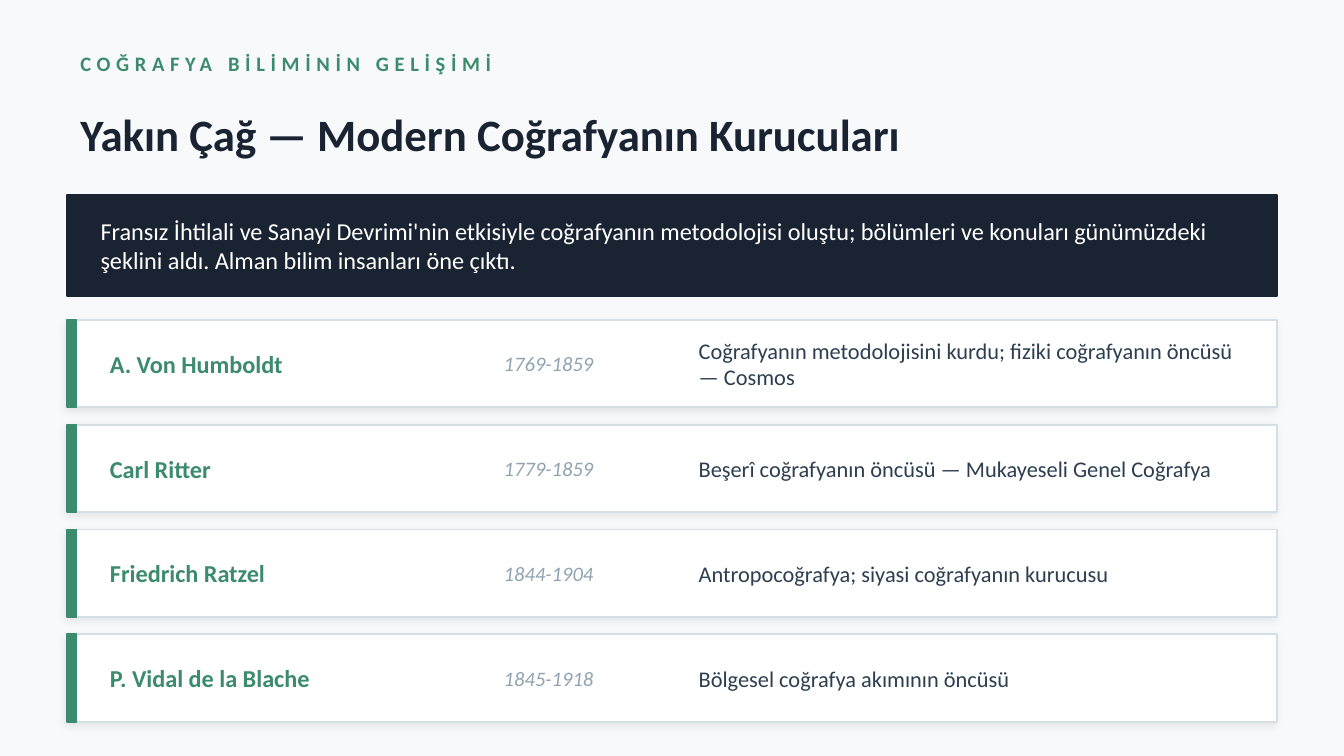
from lxml.etree import SubElement
from pptx import Presentation
from pptx.dml.color import RGBColor
from pptx.enum.shapes import MSO_SHAPE
from pptx.enum.text import MSO_ANCHOR
from pptx.oxml.ns import qn
from pptx.util import Emu, Pt

PX_PER_INCH = 200
EMU_PER_PX = 914400 // PX_PER_INCH

BACKGROUND = RGBColor(0xF7, 0xF9, 0xFB)
NAVY = RGBColor(0x1A, 0x23, 0x32)
GREEN = RGBColor(0x3D, 0x8B, 0x6E)
WHITE = RGBColor(0xFF, 0xFF, 0xFF)
BORDER = RGBColor(0xD4, 0xDE, 0xE5)
MUTED = RGBColor(0x8F, 0xA3, 0xB1)
SLATE = RGBColor(0x2C, 0x3E, 0x50)

LEFT, WIDTH = 100, 1800
BANNER_TOP, BANNER_HEIGHT = 290, 150
CARDS_TOP, CARD_HEIGHT, CARD_PITCH = 476, 130, 156

FOUNDERS = [
    ("A. Von Humboldt", "1769-1859",
     "Coğrafyanın metodolojisini kurdu; fiziki coğrafyanın öncüsü — Cosmos"),
    ("Carl Ritter", "1779-1859",
     "Beşerî coğrafyanın öncüsü — Mukayeseli Genel Coğrafya"),
    ("Friedrich Ratzel", "1844-1904",
     "Antropocoğrafya; siyasi coğrafyanın kurucusu"),
    ("P. Vidal de la Blache", "1845-1918",
     "Bölgesel coğrafya akımının öncüsü"),
]


def px(*lengths):
    return [Emu(length * EMU_PER_PX) for length in lengths]


def add_label(slide, text, box, size, color, bold=False, italic=False, spacing=0):
    frame = slide.shapes.add_textbox(*px(*box)).text_frame
    frame.word_wrap = True
    frame.vertical_anchor = MSO_ANCHOR.MIDDLE
    paragraph = frame.paragraphs[0]
    font = paragraph.font
    font.name = "Calibri"
    font.size = Pt(size)
    font.bold = bold
    font.italic = italic
    font.color.rgb = color
    run = paragraph.add_run()
    run.text = text
    if spacing:
        run._r.get_or_add_rPr().set("spc", str(spacing * 100))


def add_panel(slide, box, fill, border):
    panel = slide.shapes.add_shape(MSO_SHAPE.RECTANGLE, *px(*box))
    panel.shadow.inherit = False
    panel.fill.solid()
    panel.fill.fore_color.rgb = fill
    panel.line.color.rgb = border
    panel.line.width = Pt(1)
    return panel


def add_soft_shadow(panel):
    effects = panel._element.spPr.find(qn("a:effectLst"))
    shadow = SubElement(effects, qn("a:outerShdw"), blurRad=str(Pt(4)),
                        dist=str(Pt(2)), dir=str(135 * 60000),
                        algn="bl", rotWithShape="0")
    color = SubElement(shadow, qn("a:srgbClr"), val="000000")
    SubElement(color, qn("a:alpha"), val="8000")


def add_founder_card(slide, top, name, years, contribution):
    card = add_panel(slide, (LEFT, top, WIDTH, CARD_HEIGHT), WHITE, BORDER)
    add_soft_shadow(card)
    add_panel(slide, (LEFT, top, 14, CARD_HEIGHT), GREEN, GREEN)
    add_label(slide, name, (144, top, 560, CARD_HEIGHT), 13, GREEN, bold=True)
    add_label(slide, years, (730, top, 260, CARD_HEIGHT), 11, MUTED, italic=True)
    add_label(slide, contribution, (1020, top, 860, CARD_HEIGHT), 12, SLATE)


def main():
    deck = Presentation()
    deck.slide_width, deck.slide_height = px(2000, 1125)
    slide = deck.slides.add_slide(deck.slide_layouts[6])
    slide.background.fill.solid()
    slide.background.fill.fore_color.rgb = BACKGROUND

    add_label(slide, "COĞRAFYA BİLİMİNİN GELİŞİMİ", (LEFT, 56, WIDTH, 76),
              11, GREEN, bold=True, spacing=3)
    add_label(slide, "Yakın Çağ — Modern Coğrafyanın Kurucuları",
              (LEFT, 144, WIDTH, 110), 24, NAVY, bold=True)

    add_panel(slide, (LEFT, BANNER_TOP, WIDTH, BANNER_HEIGHT), NAVY, NAVY)
    add_label(slide,
              "Fransız İhtilali ve Sanayi Devrimi'nin etkisiyle coğrafyanın "
              "metodolojisi oluştu; bölümleri ve konuları günümüzdeki şeklini "
              "aldı. Alman bilim insanları öne çıktı.",
              (130, BANNER_TOP, 1740, BANNER_HEIGHT), 13, WHITE)

    for row, founder in enumerate(FOUNDERS):
        add_founder_card(slide, CARDS_TOP + row * CARD_PITCH, *founder)

    deck.save("out.pptx")


if __name__ == "__main__":
    main()
